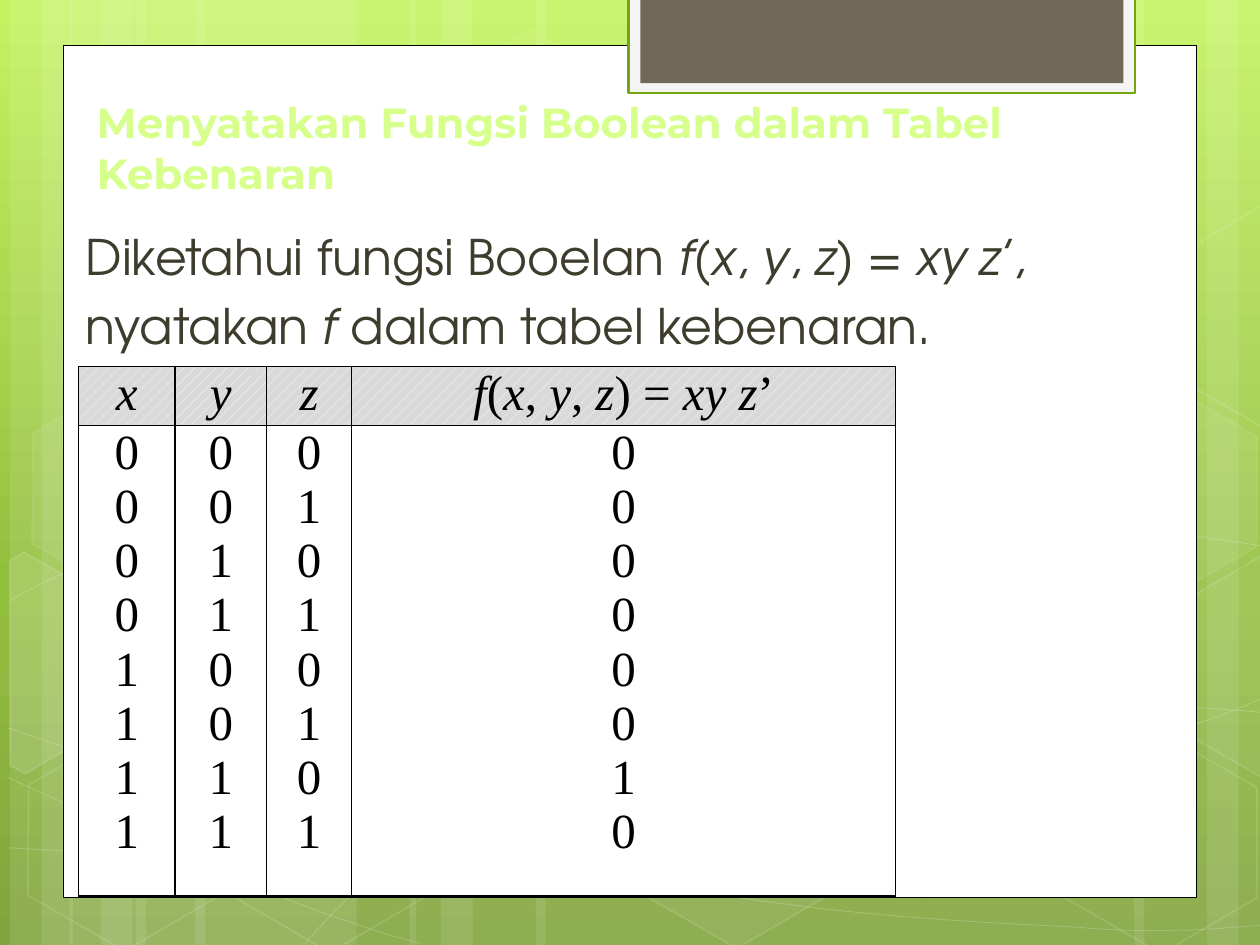
"""Build a slide that states a Boolean function as a truth table."""
from copy import deepcopy
from dataclasses import dataclass
from itertools import product
from math import cos, radians, sin

from lxml import etree
from pptx import Presentation
from pptx.dml.color import RGBColor
from pptx.dml.fill import FillFormat
from pptx.enum.dml import MSO_PATTERN
from pptx.enum.shapes import MSO_SHAPE
from pptx.enum.text import MSO_ANCHOR, PP_ALIGN
from pptx.oxml.ns import qn
from pptx.shapes.autoshape import Shape
from pptx.slide import Slide
from pptx.table import _Cell
from pptx.text.text import TextFrame, _Paragraph
from pptx.util import Cm, Pt

RECTANGLE, HEXAGON = MSO_SHAPE.RECTANGLE, MSO_SHAPE.HEXAGON
DOTTED = MSO_PATTERN.PERCENT_20
TOP, BOTTOM = MSO_ANCHOR.TOP, MSO_ANCHOR.BOTTOM
CENTER = PP_ALIGN.CENTER

COLORS = {
    "white": "FFFFFF", "black": "000000", "lime": "C3F35F", "leaf": "93BF3F",
    "moss": "81A53E", "tab": "F5F5F5", "tab_edge": "74A510", "tab_core": "71685A",
    "title": "D6FF8C", "body": "3E3D2D", "header": "D9D9D9",
}
BACKDROP = [("lime", 0), ("leaf", 0.62), ("moss", 1)]
SLIDE_WIDTH, SLIDE_HEIGHT = 25.4, 19.05
TILT = 30
Point = tuple[float, float]


@dataclass
class Panel:
    """A rectangle or hexagon, in centimetres, with opacities in percent."""
    left: float
    top: float
    width: float
    height: float
    fill: str = "white"
    opacity: int = 100
    edge: str = ""
    edge_width: float = 1
    edge_opacity: int = 100


STRIPES = {
    4.45: [2.74, 3.94, 18.62], 1.27: [0.2, 1.4, 8.26, 24.33],
    2.11: [0.84, 2.03, 8.89, 22.86], 7.82: [10.8],
}
CURVES = [
    [(0.18, 17.09), (1.55, 17.17), (2.92, 17.25), (4.83, 17.22), (6.73, 17.2), (9.09, 17.15),
     (11.63, 16.89), (14.17, 16.64), (17.78, 16.15), (20.12, 15.67), (22.43, 15.19),
     (24.82, 14.43), (25.58, 14)],
    [(0.18, 12.12), (0.91, 11.71), (1.65, 11.33), (3.07, 10.95), (4.52, 10.57), (6.58, 10.01),
     (8.81, 9.83), (11.07, 9.65), (13.82, 9.63), (16.61, 9.83), (19.41, 10.03),
     (24.05, 10.82), (25.58, 11.02)],
    [(0.15, 15.67), (3.23, 17.07), (6.27, 18.47), (8.48, 19.02)],
    [(0.18, 14.68), (0.97, 14.96), (1.78, 15.24), (3.25, 15.65), (4.72, 16.03), (6.93, 16.66),
     (9.07, 17.09), (11.18, 17.53), (13.84, 17.98), (15.95, 18.24), (18.06, 18.52),
     (20.32, 18.62), (21.67, 18.69), (22.99, 18.8), (23.34, 18.75), (24, 18.75),
     (24.66, 18.72), (25.12, 18.67), (25.58, 18.64)],
    [(6.15, 19.02), (6.6, 18.52), (7.06, 18.01), (7.67, 17.55), (8.28, 17.09), (9.14, 16.59),
     (9.86, 16.23), (10.57, 15.88), (11, 15.72), (11.94, 15.47), (12.85, 15.21),
     (14.55, 14.86), (15.44, 14.68), (16.36, 14.5), (16.48, 14.5), (17.27, 14.45),
     (18.06, 14.38), (19.3, 14.3), (20.17, 14.27), (21.06, 14.25), (22.5, 14.27),
     (22.5, 14.27), (23.07, 14.27), (23.64, 14.27), (24.21, 14.27), (24.66, 14.3),
     (25.1, 14.33), (25.32, 14.35), (25.55, 14.38), (25.48, 14.35), (25.55, 14.38)],
]
HEXAGONS = [
    Panel(left, top, 4.45, 3.86, "white", opacity, "white", 1, edge_opacity)
    for left, top, opacity, edge_opacity in [
        (8.48, 0.91, 4, 8), (12.62, 14.96, 6, 12), (0.28, 15.01, 0, 12), (0.36, 7.92, 7, 8),
        (4.42, 15.04, 0, 12), (19.13, 11.51, 10, 12), (21.18, 15.06, 0, 12), (21.18, 7.98, 7, 8)]
]
CUT_HEXAGONS = [
    ([(0.2, 11.3), (0.48, 11.13), (2.44, 12.24), (2.41, 14.48), (0.51, 15.6), (0.2, 15.42)],
     (0.91, 13.59), 10),
    ([(23.52, 12.32), (25.43, 11.2), (25.63, 11.33), (25.63, 15.57), (25.45, 15.67),
      (23.52, 14.55)], (25.02, 13.21), 4),
    ([(23.52, 5.26), (25.43, 4.14), (25.65, 4.27), (25.63, 8.51), (25.45, 8.61),
      (23.52, 7.49)], (25.02, 6.12), 0),
]
FRAMES = [
    Panel(1.27, 0.91, 22.86, 17.19, "white", edge="black", edge_width=0.5),
    Panel(12.67, -0.05, 10.21, 1.93, "tab", edge="tab_edge", edge_width=1.25),
    Panel(12.91, -0.05, 9.74, 1.73, "tab_core"),
]
TITLE = "Menyatakan Fungsi Boolean dalam Tabel Kebenaran"
QUESTION = ["Diketahui fungsi Booelan *f*(*x*, *y*, *z*) = *xy z*’,",
            "nyatakan *f *dalam tabel kebenaran."]
HEADERS = ["*x*", "*y*", "*z*", "*f*(*x*, *y*, *z*) = *xy z*’"]
COLUMN_WIDTHS = [1.95, 1.84, 1.72, 10.96]
ROW_HEIGHTS = [1.1, 8.81]
TABLE_HEIGHT = 10.67


def rgb(name: str) -> RGBColor:
    return RGBColor.from_string(COLORS[name])


def paint(fill: FillFormat, color: str, opacity: int = 100) -> None:
    if not opacity:
        fill.background()
        return
    fill.solid()
    fill.fore_color.rgb = rgb(color)
    if opacity < 100:
        tone = fill._xPr.find(qn("a:solidFill"))[0]
        etree.SubElement(tone, qn("a:alpha"), val=str(opacity * 1000))


def dress(shape: Shape, panel: Panel) -> None:
    shape.shadow.inherit = False
    paint(shape.fill, panel.fill, panel.opacity)
    paint(shape.line.fill, panel.edge, panel.edge_opacity if panel.edge else 0)
    if panel.edge:
        shape.line.width = Pt(panel.edge_width)


def add_panel(page: Slide, kind: MSO_SHAPE, panel: Panel) -> Shape:
    shape = page.shapes.add_shape(
        kind, Cm(panel.left), Cm(panel.top), Cm(panel.width), Cm(panel.height))
    dress(shape, panel)
    return shape


def add_outline(page: Slide, points: list[Point], close: bool, look: Panel) -> Shape:
    start, *rest = [(Cm(x), Cm(y)) for x, y in points]
    builder = page.shapes.build_freeform(*start)
    builder.add_line_segments(rest, close=close)
    shape = builder.convert_to_shape()
    dress(shape, look)
    return shape


def bend(shape: Shape) -> None:
    segments = list(shape._element.iter(qn("a:lnTo")))
    for first in range(0, len(segments), 3):
        curve = etree.Element(qn("a:cubicBezTo"))
        segments[first].addprevious(curve)
        for segment in segments[first:first + 3]:
            curve.append(segment[0])
            segment.getparent().remove(segment)


def untilt(points: list[Point], center: Point) -> list[Point]:
    cosine, sine = cos(radians(TILT)), sin(radians(TILT))
    offsets = [(x - center[0], y - center[1]) for x, y in points]
    return [(center[0] + x * cosine + y * sine, center[1] - x * sine + y * cosine)
            for x, y in offsets]


def write(para: _Paragraph, text: str, font: str, size: float, color: str) -> None:
    para.font.name, para.font.size, para.font.color.rgb = font, Pt(size), rgb(color)
    for index, part in enumerate(text.split("*")):
        if part:
            span = para.add_run()
            span.text = part
            if index % 2:
                span.font.italic = True


def add_text_box(page: Slide, left: float, top: float, width: float, height: float,
                 anchor: MSO_ANCHOR) -> TextFrame:
    frame = page.shapes.add_textbox(Cm(left), Cm(top), Cm(width), Cm(height)).text_frame
    frame.word_wrap, frame.vertical_anchor = True, anchor
    return frame


def fill_cell(cell: _Cell, lines: list[str], is_header: bool) -> None:
    cell.margin_left = cell.margin_right = Cm(0.18)
    cell.margin_top = cell.margin_bottom = 0
    properties = cell._tc.get_or_add_tcPr()
    for side in ("lnL", "lnR", "lnT", "lnB"):
        border = etree.SubElement(properties, qn(f"a:{side}"), w=str(Pt(1)))
        solid = etree.SubElement(border, qn("a:solidFill"))
        etree.SubElement(solid, qn("a:srgbClr"), val=COLORS["black"])
    if is_header:
        cell.fill.patterned()
        cell.fill.pattern = DOTTED
        cell.fill.fore_color.rgb, cell.fill.back_color.rgb = rgb("white"), rgb("header")
    else:
        cell.fill.background()
    frame = cell.text_frame
    for index, line in enumerate(lines):
        para = frame.add_paragraph() if index else frame.paragraphs[0]
        para.alignment = CENTER
        write(para, line, "Times New Roman", 28, "black")


def add_truth_table(page: Slide) -> None:
    holder = page.shapes.add_table(2, 4, Cm(1.58), Cm(7.39), Cm(sum(COLUMN_WIDTHS)),
                                   Cm(TABLE_HEIGHT))
    table = holder.table
    table.first_row = table.horz_banding = False
    for row, height in zip(table.rows, ROW_HEIGHTS):
        row.height = Cm(height)
    truths = [(x, y, z, x * y * (1 - z)) for x, y, z in product((0, 1), repeat=3)]
    for index, (header, values) in enumerate(zip(HEADERS, zip(*truths))):
        table.columns[index].width = Cm(COLUMN_WIDTHS[index])
        fill_cell(table.cell(0, index), [header], True)
        fill_cell(table.cell(1, index), [str(value) for value in values], False)
    holder.height = Cm(TABLE_HEIGHT)


def set_backdrop(page: Slide) -> None:
    fill = page.background.fill
    fill.gradient()
    fill.gradient_angle = 270
    stops = page._element.find(".//" + qn("a:gsLst"))
    stops.insert(1, deepcopy(stops[0]))
    for stop, (color, position) in zip(fill.gradient_stops, BACKDROP):
        stop.color.rgb, stop.position = rgb(color), position


def main() -> None:
    deck = Presentation()
    deck.slide_width, deck.slide_height = Cm(SLIDE_WIDTH), Cm(SLIDE_HEIGHT)
    page = deck.slides.add_slide(deck.slide_layouts[6])
    set_backdrop(page)
    for width, lefts in STRIPES.items():
        for left in lefts:
            add_panel(page, RECTANGLE, Panel(left, 0, width, SLIDE_HEIGHT, opacity=10))
    for controls in CURVES:
        bend(add_outline(page, controls, False, Panel(0, 0, 0, 0, "white", 0, "white", 0.5, 20)))
    for panel in HEXAGONS:
        hexagon = add_panel(page, HEXAGON, panel)
        hexagon.rotation, hexagon.adjustments[0] = TILT, 0.285
    for points, center, opacity in CUT_HEXAGONS:
        look = Panel(0, 0, 0, 0, "white", opacity, "white", 1, 12)
        add_outline(page, untilt(points, center), True, look).rotation = TILT
    for panel in FRAMES:
        add_panel(page, RECTANGLE, panel)

    title = add_text_box(page, 1.7, 2.51, 22, 1.6, BOTTOM).paragraphs[0]
    write(title, TITLE, "Montserrat", 24, "title")
    title.font.bold = True
    body = add_text_box(page, 1.27, 4.45, 22.86, 14.02, TOP)
    for index, line in enumerate(QUESTION):
        para = body.add_paragraph() if index else body.paragraphs[0]
        write(para, line, "TeX Gyre Adventor", 28, "body")
        para.space_before = Pt(5.6)
        indents = para._p.get_or_add_pPr()
        indents.set("marL", str(Cm(0.97)))
        indents.set("indent", str(Cm(-0.76)))
    add_truth_table(page)
    deck.save("out.pptx")


if __name__ == "__main__":
    main()
